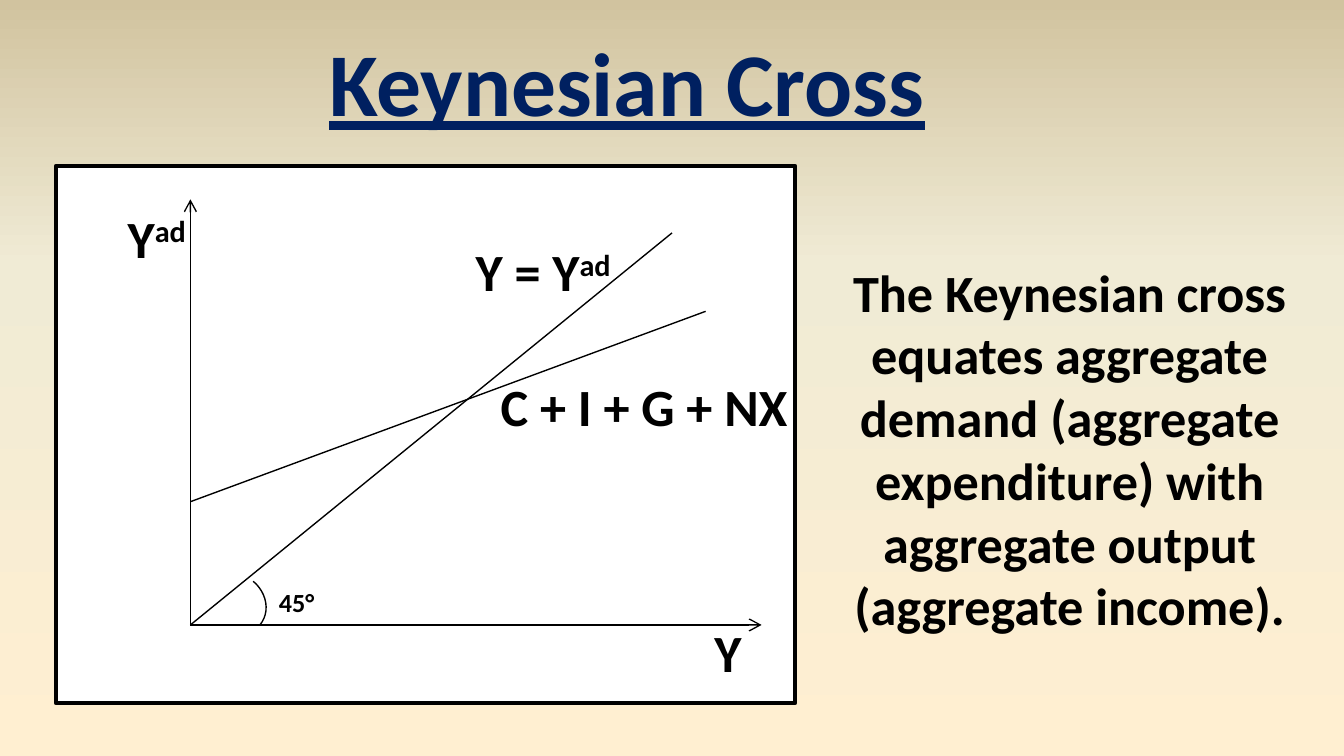
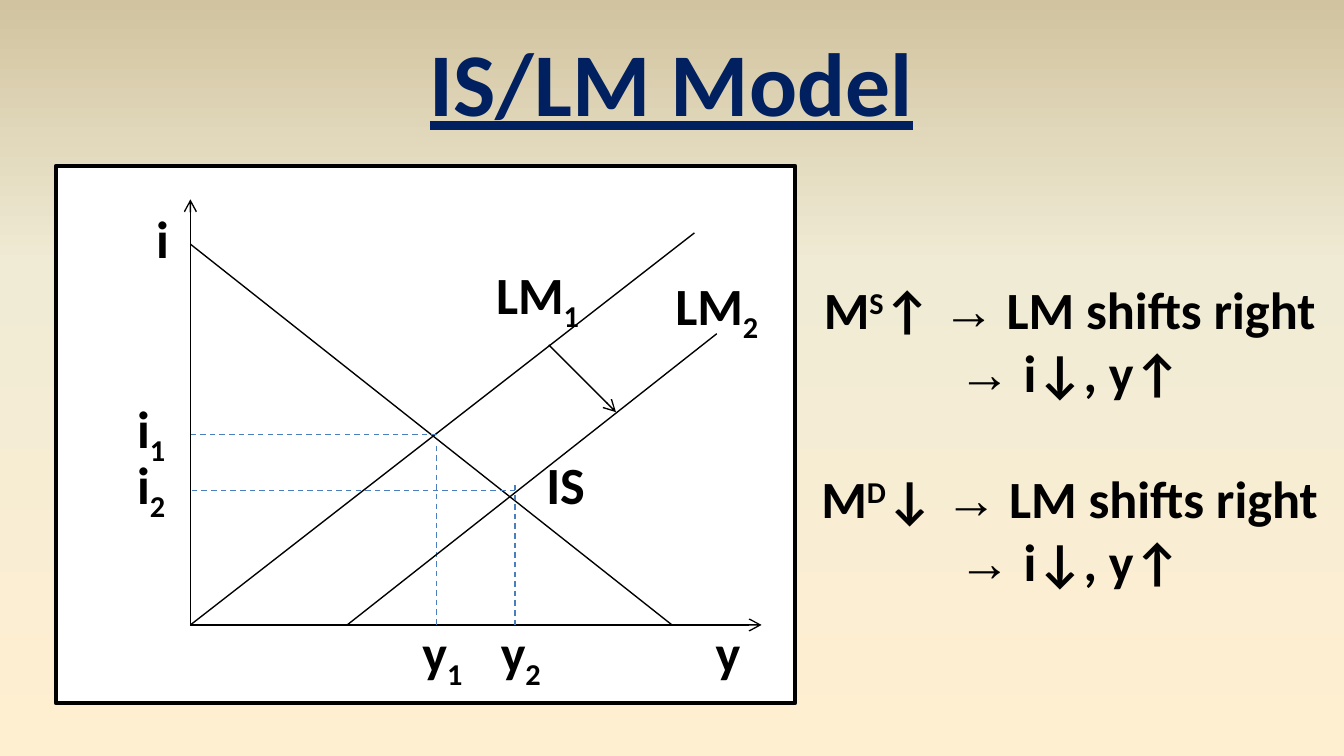
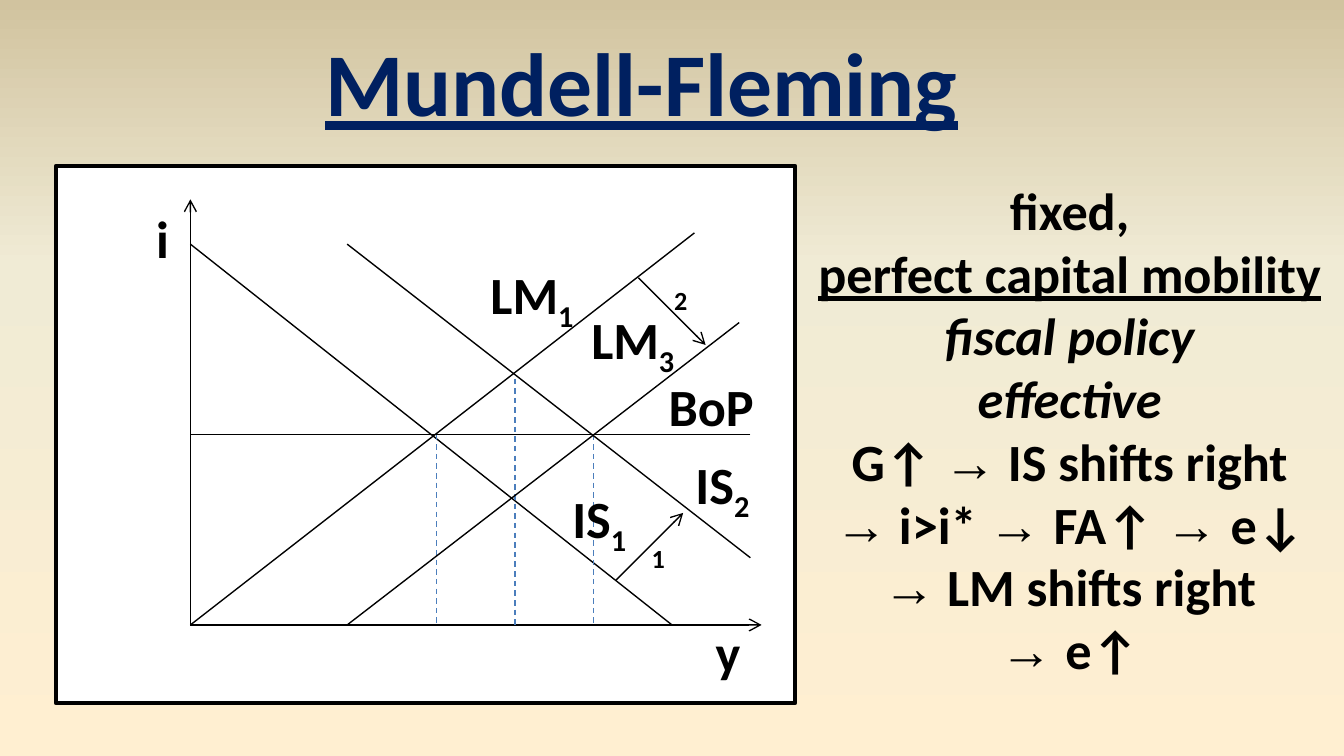
from copy import deepcopy

from lxml import etree
from pptx import Presentation
from pptx import util as u
from pptx.dml.color import RGBColor
from pptx.enum import dml, shapes, text
from pptx.oxml.ns import qn

COLOURS = {"title": "002060", "ink": "000000", "panel": "FFFFFF", "guide": "4B7EBC",
           "sand": "FFEFD1", "cream": "F0EBD5", "khaki": "D1C39F"}
BACKDROP = [(0, "sand"), (0.65, "cream"), (1, "khaki")]
SLIDE_WIDTH = 10
SLIDE_HEIGHT = SLIDE_WIDTH * 9 / 16
UNIT = 1 / 12
ORIGIN_X, ORIGIN_Y = 17 * UNIT, 4.65
BODY_SIZE, SMALL_SIZE = 28, 14
LABEL_ROWS = {BODY_SIZE: 6.84, SMALL_SIZE: 4.08}
TITLE_TOP, TITLE_HEIGHT = 0.15, 0.91


def colour(name):
    """Return the named colour."""
    return RGBColor.from_string(COLOURS[name])


def across(column):
    """Place a diagram column on the slide."""
    return u.Inches(ORIGIN_X + column * UNIT)


def up(row):
    """Place a diagram row, counted upwards from the origin."""
    return u.Inches(ORIGIN_Y - row * UNIT)


def span(units):
    """Turn grid units into a length."""
    return u.Inches(units * UNIT)


def sup(letters):
    """Return a raised run."""
    return letters, {"baseline": "30000"}


def sub(letters):
    """Return a lowered run."""
    return letters, {"baseline": "-25000"}


def set_backdrop(prs):
    """Give the master its gradient."""
    fill = prs.slide_master.background.fill
    fill.gradient()
    fill.gradient_angle = 90
    stop_list = prs.slide_master.element.find(".//" + qn("a:gsLst"))
    stop_list.append(deepcopy(stop_list[0]))
    for stop, (position, name) in zip(fill.gradient_stops, BACKDROP):
        stop.position = position
        stop.color.rgb = colour(name)


def add_run(paragraph, words, size, ink="ink", **attributes):
    """Add one bold run; implication arrows take the serif font."""
    run = paragraph.add_run()
    run.text = words
    run.font.name = "Times New Roman" if words.startswith("→") else "Calibri"
    run.font.size = u.Pt(size)
    run.font.bold = True
    run.font.color.rgb = colour(ink)
    for key, value in attributes.items():
        run.font._element.set(key, value)


def add_text(slide, paragraphs, left, top, columns, rows, size=BODY_SIZE):
    """Add a centred text box on the diagram grid."""
    box = slide.shapes.add_textbox(across(left), up(top), span(columns), span(rows))
    frame = box.text_frame
    frame.word_wrap = True
    frame.auto_size = text.MSO_AUTO_SIZE.SHAPE_TO_FIT_TEXT
    for index, runs in enumerate(paragraphs):
        paragraph = frame.add_paragraph() if index else frame.paragraphs[0]
        paragraph.alignment = text.PP_ALIGN.CENTER
        for run in runs:
            words, attributes = (run, {}) if isinstance(run, str) else run
            add_run(paragraph, words, size, **attributes)
    return frame


def add_labels(slide, labels, size=BODY_SIZE):
    """Add one-line diagram labels given as runs, left, top and columns."""
    for runs, left, top, columns in labels:
        add_text(slide, [runs], left, top, columns, LABEL_ROWS[size], size)


def add_line(slide, start, end, ink="ink", dashed=False, arrow=False):
    """Draw a thin line between two grid points."""
    line = slide.shapes.add_connector(shapes.MSO_CONNECTOR.STRAIGHT, across(start[0]),
                                      up(start[1]), across(end[0]), up(end[1]))
    line.line.width = u.Pt(0.75)
    line.line.color.rgb = colour(ink)
    if dashed:
        line.line.dash_style = dml.MSO_LINE.DASH
    if arrow:
        etree.SubElement(line.line._get_or_add_ln(), qn("a:tailEnd"), type="arrow")
    etree.SubElement(line._element.spPr, qn("a:effectLst"))


def add_curves(slide, *curves, **style):
    """Draw several lines of one style."""
    for start, end in curves:
        add_line(slide, start, end, **style)


def add_guides(slide, *guides):
    """Draw dashed guides to the axes."""
    add_curves(slide, *guides, ink="guide", dashed=True)


def add_diagram_slide(prs, title, left, width, vertical, horizontal):
    """Add a titled slide with a panel and two named axes."""
    slide = prs.slides.add_slide(prs.slide_layouts[5])
    heading = slide.shapes.title
    heading.left, heading.top = u.Inches(left), u.Inches(TITLE_TOP)
    heading.width, heading.height = u.Inches(width), u.Inches(TITLE_HEIGHT)
    frame = heading.text_frame
    frame.word_wrap = False
    frame.auto_size = text.MSO_AUTO_SIZE.NONE
    frame.vertical_anchor = text.MSO_ANCHOR.TOP
    frame.paragraphs[0].alignment = text.PP_ALIGN.CENTER
    add_run(frame.paragraphs[0], title, 48, "title", u="sng")

    panel = slide.shapes.add_shape(shapes.MSO_SHAPE.RECTANGLE, across(-12), up(41),
                                   span(66), span(48))
    panel.shadow.inherit = False
    panel.fill.solid()
    panel.fill.fore_color.rgb = colour("panel")
    panel.line.color.rgb = colour("ink")
    panel.line.width = u.Pt(2)
    add_curves(slide, ((0, 0), (0, 38)), ((0, 0), (51, 0)), arrow=True)
    add_labels(slide, [vertical, ([horizontal], 44, 1, 8)])
    return slide


def add_is_lm_slide(prs, title, left, width):
    """Add a diagram slide with the first IS and LM curves."""
    slide = add_diagram_slide(prs, title, left, width, (["i"], -7, 38, 9), "y")
    add_curves(slide, ((45, 35), (0, 0)), ((0, 34), (43, 0)))
    return slide


def add_angle(slide):
    """Mark the angle at the origin."""
    arc = slide.shapes.add_shape(shapes.MSO_SHAPE.ARC, across(1), up(4.5), span(5.9), span(5.2))
    arc.rotation = 39.7
    arc.shadow.inherit = False
    arc.fill.background()
    arc.line.color.rgb = colour("ink")
    arc.line.width = u.Pt(0.75)
    add_labels(slide, [(["45°"], 6, 4, 7)], SMALL_SIZE)


def build_keynesian_cross(prs):
    """Build the Keynesian cross."""
    slide = add_diagram_slide(prs, "Keynesian Cross", 2.33, 4.67,
                              (["Y", sup("ad")], -8, 38, 10), "Y")
    add_curves(slide, ((0, 0), (43, 35)), ((0, 11), (46, 28)))
    add_labels(slide, [(["C + I + G + NX"], 26, 23, 29), (["Y = Y", sup("ad")], 24, 35, 15)])
    add_angle(slide)
    add_text(slide, [["The Keynesian cross equates aggregate demand (aggregate expenditure) "
                      "with aggregate output (aggregate income)."]], 57, 33.2, 43, 35.2)


def build_is_lm(prs):
    """Build the IS/LM model with a shift of LM."""
    slide = add_is_lm_slide(prs, "IS/LM Model", 3.08, 3.83)
    add_guides(slide, ((29, 12), (0, 12)), ((22, 17), (0, 17)),
               ((22, 16), (22, 0)), ((29, 12.5), (29, 0)))
    add_curves(slide, ((47, 26), (14, 0)))
    add_line(slide, (32, 25), (38, 19), arrow=True)
    add_labels(slide, [
        (["IS"], 29, 16, 9), (["LM", sub("1")], 25, 33, 12), (["LM", sub("2")], 41, 32, 12),
        (["i", sub("1")], -7, 21, 7), (["i", sub("2")], -7, 16, 7),
        (["y", sub("1")], 19, 1, 7), (["y", sub("2")], 26, 1, 7)])
    shift, outcome = ["→", " LM shifts right"], ["→ ", "i↓, y↑"]
    notes = add_text(slide, [["M", sup("S"), "↑ ", *shift], outcome,
                             ["M", sup("D"), "↓ ", *shift], outcome], 54, 31.6, 49, 29.5)
    notes.paragraphs[2].space_before = u.Pt(34)


def build_mundell_fleming(prs):
    """Build fiscal policy under fixed rates."""
    slide = add_is_lm_slide(prs, "Mundell-Fleming", 2.3, 4.95)
    add_guides(slide, ((22, 17), (0, 17)), *(((x, y), (x, 0)) for x, y in
                                            [(22, 17), (29, 22), (36, 17)]))
    add_curves(slide, ((14, 34), (50, 6)), ((50, 17), (0, 17)), ((49, 27), (14, 0)))
    add_curves(slide, ((38, 4), (44, 10)), ((40, 31), (46, 25)), arrow=True)
    add_labels(slide, [
        (["IS", sub("1")], 32, 13, 9), (["IS", sub("2")], 43, 16, 9), (["BoP"], 41, 23, 11),
        (["LM", sub("1")], 25, 33, 11), (["LM", sub("3")], 34, 29, 11)])
    add_labels(slide, [(["2"], 42, 31, 3), (["1"], 40, 8, 3)], SMALL_SIZE)
    add_text(slide, [
        ["fixed,"],
        [("perfect capital mobility", {"u": "sng"})],
        [("fiscal policy", {"i": "1"})],
        [("effective", {"i": "1"})],
        ["G↑ ", "→", " IS shifts right"],
        ["→", " i>i* ", "→ ", "FA↑ ", "→ ", "e↓ ", "→", " LM shifts right"],
        ["→ ", "e↑"]], 54, 40.5, 49, 46.4)


def main():
    """Build and save the deck."""
    prs = Presentation()
    prs.slide_width, prs.slide_height = u.Inches(SLIDE_WIDTH), u.Inches(SLIDE_HEIGHT)
    set_backdrop(prs)
    build_keynesian_cross(prs)
    build_is_lm(prs)
    build_mundell_fleming(prs)
    prs.save("out.pptx")


if __name__ == "__main__":
    main()
